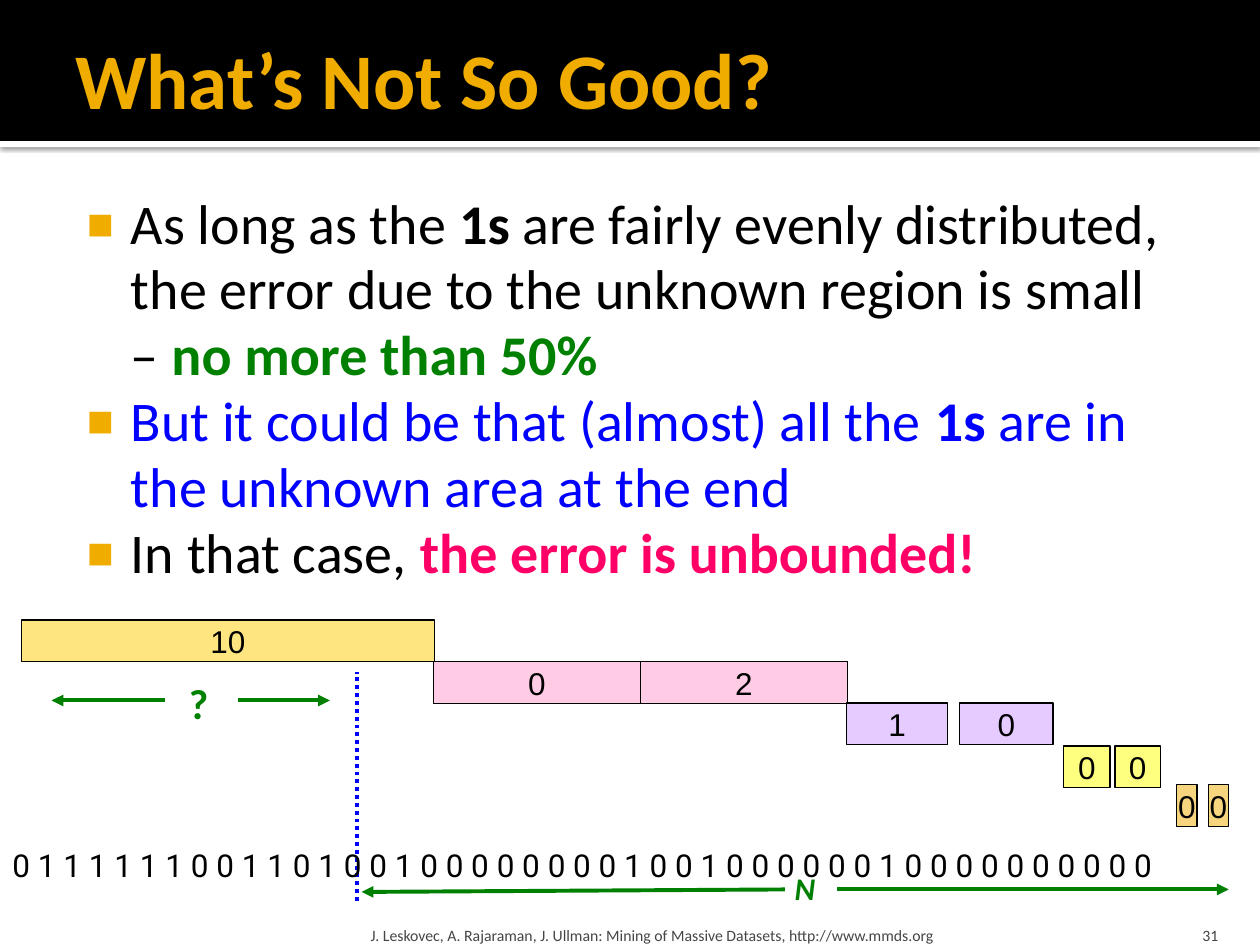
from lxml.etree import SubElement
from pptx import Presentation
from pptx.dml.color import RGBColor
from pptx.enum.dml import MSO_LINE_DASH_STYLE as Dash
from pptx.enum.shapes import MSO_CONNECTOR_TYPE as Connector, MSO_SHAPE as Shape
from pptx.enum.text import MSO_ANCHOR as Anchor, MSO_AUTO_SIZE as AutoSize, PP_ALIGN as Align
from pptx.oxml.ns import qn
from pptx.util import Cm, Pt

BLACK = RGBColor(0, 0, 0)
WHITE = RGBColor(255, 255, 255)
GOLD = RGBColor(0xF0, 0xAD, 0x00)
GREEN = RGBColor(0x00, 0x80, 0x00)
BLUE = RGBColor(0x00, 0x00, 0xFF)
PINK = RGBColor(0xFF, 0x00, 0x66)
GREY = RGBColor(0x45, 0x45, 0x45)
AMBER = RGBColor(0xFF, 0xCC, 0x00)
ROSE = RGBColor(0xFF, 0x99, 0xCC)
LILAC = RGBColor(0xCC, 0x99, 0xFF)
YELLOW = RGBColor(0xFF, 0xFF, 0x00)

BUCKET_HEIGHT = 0.84
BUCKET_ROWS = [
    (12.5, AMBER, [(0.43, 8.33, "10")]),
    (13.34, ROSE, [(8.74, 4.17, "0"), (12.91, 4.17, "2")]),
    (14.17, LILAC, [(17.07, 2.03, "1"), (19.35, 1.88, "0")]),
    (15.04, YELLOW, [(21.44, 0.94, "0"), (22.48, 0.91, "0")]),
    (15.82, GOLD, [(23.72, 0.41, "0"), (24.36, 0.41, "0")]),
]
ARROWS = [
    ((15.82, 17.93), (7.29, 17.98)),
    ((16.87, 17.93), (24.77, 17.93)),
    ((3.33, 14.12), (1.04, 14.12)),
    ((4.8, 14.12), (6.65, 14.12)),
]
BULLETS = [
    [("As long as the ", BLACK, False), ("1s ", BLACK, True),
     ("are fairly evenly distributed, the error due to the unknown region is small – ", BLACK, False),
     ("no more than 50%", GREEN, True)],
    [("But it could be that (almost) all the ", BLUE, False), ("1s ", BLUE, True),
     ("are in the unknown area at the end", BLUE, False)],
    [("In that case, ", BLACK, False), ("the error is unbounded!", PINK, True)],
]
BITS = "0 1 1 1 1 1 1 0 0 1 1 0 1 0 0 1 0 0 0 0 0 0 0 0 1 0 0 1 0 0 0 0 0 0 1 0 0 0 0 0 0 0 0 0 0"


def format_run(run, size, color, bold=False, italic=False, font="Calibri"):
    run.font.name = font
    run.font.size = Pt(size)
    run.font.color.rgb = color
    run.font.bold = bold
    run.font.italic = italic


def add_text(slide, box, text, size, color, anchor=Anchor.TOP, align=Align.LEFT,
             wrap=True, **style):
    shape = slide.shapes.add_textbox(*map(Cm, box))
    frame = shape.text_frame
    frame.text = text
    frame.word_wrap = wrap
    frame.auto_size = AutoSize.NONE if wrap else AutoSize.SHAPE_TO_FIT_TEXT
    frame.vertical_anchor = anchor
    paragraph = frame.paragraphs[0]
    paragraph.alignment = align
    format_run(paragraph.runs[0], size, color, **style)
    return frame


def add_rectangle(slide, box, color):
    shape = slide.shapes.add_shape(Shape.RECTANGLE, *map(Cm, box))
    shape.shadow.inherit = False
    shape.fill.solid()
    shape.fill.fore_color.rgb = color
    shape.line.fill.background()
    return shape


def add_header(slide):
    strip = add_rectangle(slide, (0, 2.84, 25.4, 0.13), WHITE)
    effects = strip.element.spPr.find(qn("a:effectLst"))
    shadow = SubElement(effects, qn("a:outerShdw"), blurRad=str(Pt(2.5)),
                        dist=str(Pt(0.8)), dir="5400000", rotWithShape="0")
    color = SubElement(shadow, qn("a:srgbClr"), val=str(BLACK))
    SubElement(color, qn("a:alpha"), val="60000")
    add_rectangle(slide, (0, 0, 25.4, 2.84), BLACK)
    add_text(slide, (1.27, 0.2, 22.86, 2.74), "What’s Not So Good?", 45, GOLD,
             Anchor.MIDDLE, bold=True)


def add_bullets(slide):
    frame = slide.shapes.add_textbox(Cm(1.27), Cm(3.61), Cm(22.86), Cm(14.6)).text_frame
    frame.word_wrap = True
    frame.margin_left = Cm(0.15)
    frame.margin_top = Cm(0.25)
    for index, pieces in enumerate(BULLETS):
        paragraph = frame.add_paragraph() if index else frame.paragraphs[0]
        paragraph.line_spacing = 0.98
        properties = paragraph._p.get_or_add_pPr()
        properties.set("marL", str(Cm(1.22)))
        properties.set("indent", str(Cm(-0.89)))
        bullet_color = SubElement(properties, qn("a:buClr"))
        SubElement(bullet_color, qn("a:srgbClr"), val=str(GOLD))
        SubElement(properties, qn("a:buSzPct"), val="80000")
        SubElement(properties, qn("a:buFont"), typeface="Arial")
        SubElement(properties, qn("a:buChar"), char="■")
        for text, color, bold in pieces:
            run = paragraph.add_run()
            run.text = text
            format_run(run, 32, color, bold)


def add_bucket(slide, left, top, width, color, count):
    shape = add_rectangle(slide, (left, top, width, BUCKET_HEIGHT), color)
    fill_color = shape.element.spPr.find(qn("a:solidFill"))[0]
    SubElement(fill_color, qn("a:alpha"), val="50000")
    shape.line.color.rgb = BLACK
    shape.line.width = Pt(0.75)
    frame = shape.text_frame
    frame.text = count
    frame.word_wrap = False
    frame.vertical_anchor = Anchor.MIDDLE
    frame.paragraphs[0].alignment = Align.CENTER
    format_run(frame.paragraphs[0].runs[0], 18, BLACK, font="Arial")


def add_line(slide, start, end, color, dash=None, arrow=False):
    line = slide.shapes.add_connector(Connector.STRAIGHT, *map(Cm, start + end))
    line.line.color.rgb = color
    line.line.width = Pt(2.25)
    if dash:
        line.line.dash_style = dash
    if arrow:
        SubElement(line.line._get_or_add_ln(), qn("a:tailEnd"), type="triangle")
    SubElement(line.element.spPr, qn("a:effectLst"))


def add_footer(slide):
    number = add_text(slide, (22.78, 18.29, 2.03, 0.76), "31", 9, GREY, Anchor.BOTTOM, Align.RIGHT)
    number.margin_bottom = 0
    credit = add_text(
        slide, (7.34, 18.29, 15.29, 0.76),
        "J. Leskovec, A. Rajaraman, J. Ullman: Mining of Massive Datasets, http://www.mmds.org",
        9, GREY, Anchor.BOTTOM)
    credit.margin_left = credit.margin_right = Cm(0.13)
    credit.margin_bottom = 0


def main():
    presentation = Presentation()
    presentation.slide_width = Cm(25.4)
    presentation.slide_height = Cm(19.05)
    slide = presentation.slides.add_slide(presentation.slide_layouts[6])
    add_header(slide)
    add_bullets(slide)
    add_footer(slide)
    add_text(slide, (15.77, 17.4, 0.94, 1.02), "N", 18, GREEN, wrap=False, bold=True, italic=True)
    add_text(slide, (3.56, 13.54, 0.89, 1.27), "?", 24, GREEN, wrap=False, bold=True)
    for start, end in ARROWS:
        add_line(slide, start, end, GREEN, arrow=True)
    for top, color, buckets in BUCKET_ROWS:
        for left, width, count in buckets:
            add_bucket(slide, left, top, width, color, count)
    add_line(slide, (7.19, 18.16), (7.19, 13.54), BLUE, Dash.ROUND_DOT)
    add_text(slide, (0, 16.94, 24.92, 1.02), BITS, 18, BLACK, font="Roboto")
    presentation.save("out.pptx")


if __name__ == "__main__":
    main()
